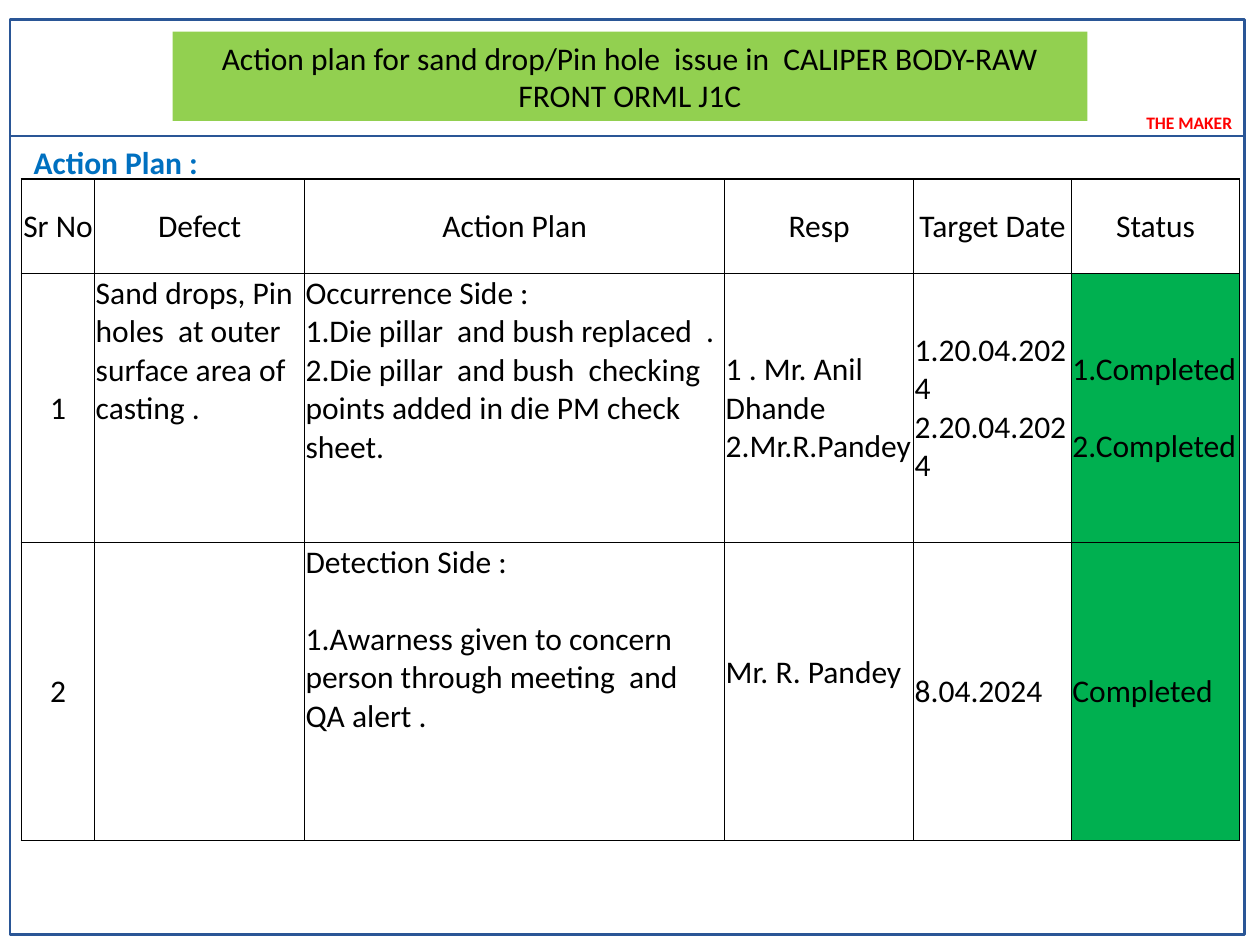
import dataclasses

import pptx
import pptx.dml.color
import pptx.enum.shapes
import pptx.enum.text
import pptx.oxml
import pptx.oxml.ns
import pptx.util

Cm, Pt = pptx.util.Cm, pptx.util.Pt
Align, Anchor = pptx.enum.text.PP_ALIGN, pptx.enum.text.MSO_ANCHOR
FONT = "Calibri"
NAVY, BLACK, GREEN = "2A5696", "000000", "00B050"


@dataclasses.dataclass
class Entry:
    """Content of one table cell; gap is the space before later paragraphs."""
    lines: tuple[str, ...] = ()
    align: Align = Align.LEFT
    anchor: Anchor = Anchor.MIDDLE
    fill: str | None = None
    gap: float = 0
    bottom: float = 0


def rgb(color: str) -> pptx.dml.color.RGBColor:
    return pptx.dml.color.RGBColor.from_string(color)


def set_font(p, size: float, color: str, bold: bool = False) -> None:
    p.font.name, p.font.size, p.font.bold = FONT, Pt(size), bold
    p.font.color.rgb = rgb(color)


def add_label(slide, text: str, left: float, top: float, width: float,
              height: float, size: float, color: str) -> None:
    sp = slide.shapes.add_textbox(Cm(left), Cm(top), Cm(width), Cm(height))
    tf = sp.text_frame
    tf.word_wrap = False
    tf.vertical_anchor = Anchor.MIDDLE
    tf.text = text
    set_font(tf.paragraphs[0], size, color, bold=True)


def set_border(cell, side: str, width: float) -> None:
    tcPr = cell._tc.get_or_add_tcPr()
    tcPr.append(pptx.oxml.parse_xml(
        f'<a:ln{side} {pptx.oxml.ns.nsdecls("a")} w="{Pt(width)}">'
        f'<a:solidFill><a:srgbClr val="{BLACK}"/></a:solidFill></a:ln{side}>'))


def fill_cell(cell, entry: Entry) -> None:
    cell.margin_left = cell.margin_right = cell.margin_top = Cm(0.02)
    cell.margin_bottom = Cm(entry.bottom)
    cell.vertical_anchor = entry.anchor
    if entry.fill:
        cell.fill.solid()
        cell.fill.fore_color.rgb = rgb(entry.fill)
    else:
        cell.fill.background()
    cell.text = "\n".join(entry.lines)
    for i, p in enumerate(cell.text_frame.paragraphs):
        p.alignment = entry.align
        p.space_before = Pt(entry.gap if i else 0)
        set_font(p, 18, BLACK)


def centred(text: str) -> Entry:
    return Entry((text,), Align.CENTER)


COLUMNS = (1.48, 4.23, 8.47, 3.81, 3.18, 3.39)
ROWS = (1.9, 5.42, 6.02)
HEADINGS = ("Sr No", "Defect", "Action Plan", "Resp", "Target Date", "Status")
PLAN = (
    [centred(heading) for heading in HEADINGS],
    [
        centred("1"),
        Entry(("Sand drops, Pin holes  at outer surface area of casting .",),
              anchor=Anchor.TOP),
        Entry(("Occurrence Side :", "1.Die pillar  and bush replaced  .",
               "2.Die pillar  and bush  checking points added in die PM check sheet."),
              anchor=Anchor.TOP),
        Entry(("1 . Mr. Anil Dhande", "2.Mr.R.Pandey")),
        Entry(("1.20.04.2024", "2.20.04.2024")),
        Entry(("1.Completed", "2.Completed"), fill=GREEN, gap=22),
    ],
    [
        centred("2"),
        Entry(),
        Entry(("Detection Side :",
               "1.Awarness given to concern  person through meeting  and QA alert ."),
              anchor=Anchor.TOP, gap=22),
        Entry(("Mr. R. Pandey",), bottom=0.77),
        Entry(("8.04.2024",)),
        Entry(("Completed",), fill=GREEN),
    ],
)


def add_plan(slide, left: float, top: float) -> None:
    tbl = slide.shapes.add_table(len(ROWS), len(COLUMNS), Cm(left), Cm(top),
                                 Cm(sum(COLUMNS)), Cm(sum(ROWS))).table
    tbl.first_row = tbl.horz_banding = False
    for column, width in zip(tbl.columns, COLUMNS):
        column.width = Cm(width)
    for row, height in zip(tbl.rows, ROWS):
        row.height = Cm(height)
    for r, entries in enumerate(PLAN):
        for c, entry in enumerate(entries):
            cell = tbl.cell(r, c)
            # Heavier left, right and top edges around the table
            set_border(cell, "L", 1 if c == 0 else 0.5)
            set_border(cell, "R", 1 if c == len(COLUMNS) - 1 else 0.5)
            set_border(cell, "T", 1 if r == 0 else 0.5)
            set_border(cell, "B", 0.5)
            fill_cell(cell, entry)


def add_frame(slide) -> None:
    left, top, width, height, rule = 0.2, 0.4, 24.89, 18.44, 2.74
    line = slide.shapes.add_connector(
        pptx.enum.shapes.MSO_CONNECTOR.STRAIGHT,
        Cm(left), Cm(rule), Cm(left + width), Cm(rule))
    line._element.spPr.append(pptx.oxml.parse_xml(
        f'<a:effectLst {pptx.oxml.ns.nsdecls("a")}/>'))
    frame = slide.shapes.add_shape(
        pptx.enum.shapes.MSO_SHAPE.RECTANGLE,
        Cm(left), Cm(top), Cm(width), Cm(height))
    frame.shadow.inherit = False
    frame.fill.background()
    for sp in (line, frame):
        sp.line.color.rgb = rgb(NAVY)
        sp.line.width = Pt(1.5)


def add_title(slide, text: str) -> None:
    sp = slide.shapes.title
    sp.left, sp.top, sp.width, sp.height = Cm(3.48), Cm(0.64), Cm(18.44), Cm(1.8)
    sp.fill.solid()
    sp.fill.fore_color.rgb = rgb("92D050")
    tf = sp.text_frame
    tf.text = text
    tf.word_wrap = True
    tf.auto_size = pptx.enum.text.MSO_AUTO_SIZE.NONE
    tf.vertical_anchor = Anchor.MIDDLE
    p = tf.paragraphs[0]
    p.alignment = Align.CENTER
    set_font(p, 18, BLACK)


def main() -> None:
    prs = pptx.Presentation()
    prs.slide_width, prs.slide_height = Cm(25.4), Cm(19.05)
    slide = prs.slides.add_slide(prs.slide_layouts.get_by_name("Title Only"))

    # Page frame and maker's name
    add_frame(slide)
    add_label(slide, "THE MAKER", 22.86, 2.16, 2.5, 0.64, 10, "FF0000")

    # Heading and action table
    add_title(slide, "Action plan for sand drop/Pin hole  issue in  "
                     "CALIPER BODY-RAW FRONT ORML J1C")
    add_label(slide, "Action Plan :", 0.43, 2.77, 6, 1, 18, "0070C0")
    add_plan(slide, 0.43, 3.61)

    prs.save("out.pptx")


if __name__ == "__main__":
    main()
